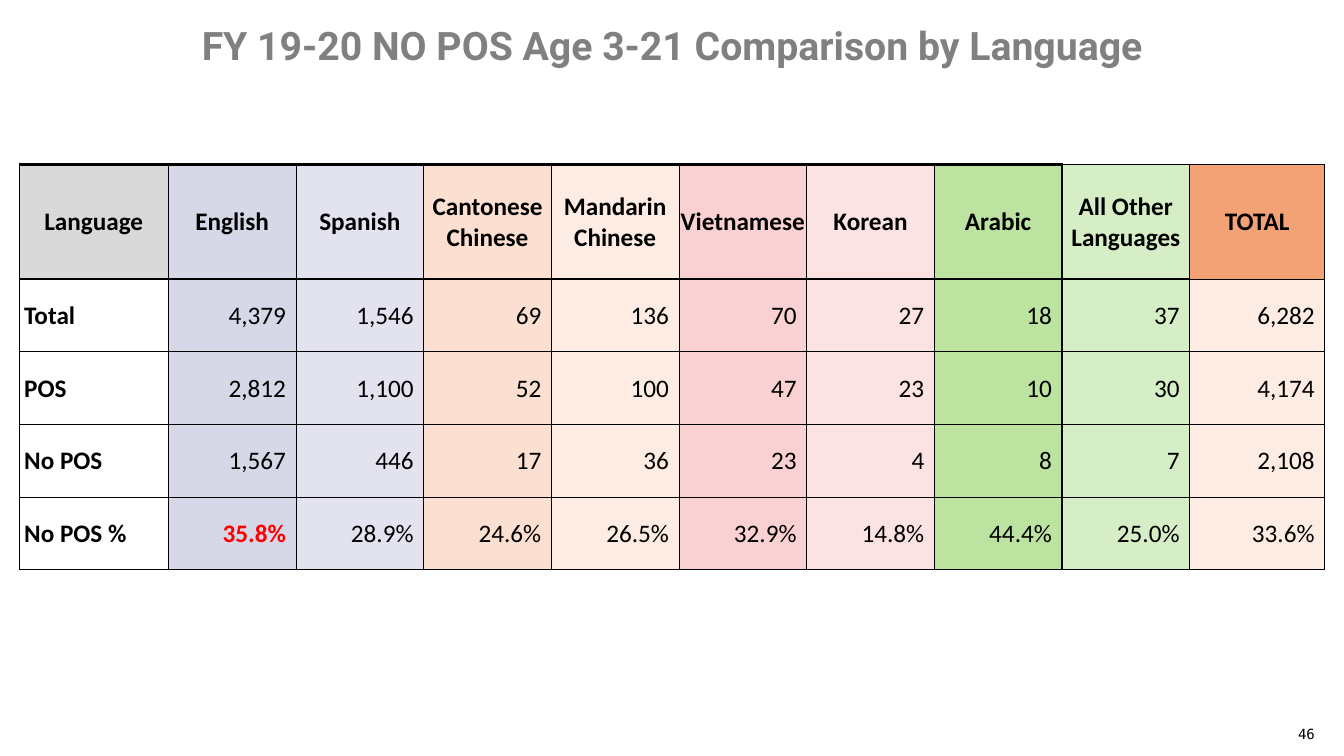
import pptx
import pptx.dml.color
import pptx.enum.text
import pptx.oxml.ns
import pptx.util
import lxml.etree

Inches = pptx.util.Inches
Pt = pptx.util.Pt
ALIGN = pptx.enum.text.PP_ALIGN
ANCHOR = pptx.enum.text.MSO_ANCHOR

TITLE = "FY 19-20 NO POS Age 3-21 Comparison by Language"
PAGE_NUMBER = "46"
LANGUAGES = [
    ("Language", "D9D9D9", 100),
    ("English", "D7D8E7", 100),
    ("Spanish", "D7D8E7", 70),
    ("Cantonese\nChinese", "FBE0D1", 100),
    ("Mandarin\nChinese", "FBE0D1", 60),
    ("Vietnamese", "F9D1D3", 100),
    ("Korean", "F9D1D3", 60),
    ("Arabic", "BCE4A0", 100),
    ("All Other\nLanguages", "BCE4A0", 60),
    ("TOTAL", "F3A276", 100),
]
MEASURES = [
    ["Total", "4,379", "1,546", "69", "136", "70", "27", "18", "37", "6,282"],
    ["POS", "2,812", "1,100", "52", "100", "47", "23", "10", "30", "4,174"],
    ["No POS", "1,567", "446", "17", "36", "23", "4", "8", "7", "2,108"],
    ["No POS %", "35.8%", "28.9%", "24.6%", "26.5%", "32.9%", "14.8%",
     "44.4%", "25.0%", "33.6%"],
]
BODY_FILLS = {0: ("FFFFFF", 100), 9: ("FBE0D1", 60)}
HIGHLIGHT = "35.8%"
MEDIUM_EDGES = {0, 3, 7, 8, 9, 10}
LEFT, TOP, WIDTH, HEIGHT = 0.19, 1.63, 12.95, 4.02
LABEL_WIDTH, TOTAL_WIDTH, HEADER_HEIGHT = 1.48, 1.34, 1.14


def color(hex_code):
    return pptx.dml.color.RGBColor.from_string(hex_code)


def write(frame, text, align, size, font, hex_code, bold=False):
    for index, line in enumerate(text.split("\n")):
        paragraph = frame.paragraphs[0] if index == 0 else frame.add_paragraph()
        paragraph.alignment = align
        run = paragraph.add_run()
        run.text = line
        run.font.size = Pt(size)
        run.font.name = font
        run.font.bold = bold
        run.font.color.rgb = color(hex_code)


def add_label(slide, box, anchor, *style):
    frame = slide.shapes.add_textbox(*map(Inches, box)).text_frame
    frame.word_wrap = True
    frame.vertical_anchor = anchor
    write(frame, *style)


def child(parent, tag, **attributes):
    return lxml.etree.SubElement(parent, pptx.oxml.ns.qn(tag), attributes)


def fill_cell(cell, hex_code, opacity):
    cell.fill.solid()
    cell.fill.fore_color.rgb = color(hex_code)
    if opacity < 100:
        shade = cell._tc.tcPr.find(".//" + pptx.oxml.ns.qn("a:srgbClr"))
        child(shade, "a:alpha", val=str(opacity * 1000))


def border_cell(cell, widths):
    properties = cell._tc.tcPr
    for index, (side, width) in enumerate(zip("LRTB", widths)):
        line = child(properties, "a:ln" + side, w=str(Pt(width)))
        child(child(line, "a:solidFill"), "a:srgbClr", val="000000")
        properties.insert(index, line)


def vertical_edge(edge):
    return 1 if edge in MEDIUM_EDGES else 0.5


def horizontal_edge(edge, column):
    last_heavy_column = {0: 7, 1: 8}.get(edge, -1)
    return 2 if column <= last_heavy_column else 0.5


def build_table(slide):
    rows = [[name for name, _, _ in LANGUAGES]] + MEASURES
    table = slide.shapes.add_table(
        len(rows), len(LANGUAGES), *map(Inches, (LEFT, TOP, WIDTH, HEIGHT))).table
    table.first_row = table.horz_banding = False
    language_width = (WIDTH - LABEL_WIDTH - TOTAL_WIDTH) / (len(LANGUAGES) - 2)
    for index, column in enumerate(table.columns):
        column.width = Inches({0: LABEL_WIDTH, 9: TOTAL_WIDTH}.get(index, language_width))
    for index, row in enumerate(table.rows):
        row.height = Inches((HEIGHT - HEADER_HEIGHT) / len(MEASURES) if index else HEADER_HEIGHT)

    for r, texts in enumerate(rows):
        for c, text in enumerate(texts):
            cell = table.cell(r, c)
            header, label = r == 0, c == 0
            cell.vertical_anchor = ANCHOR.MIDDLE
            cell.margin_left = Inches(0.05 if label and not header else 0.01)
            cell.margin_right = Inches(0.01 if label or header else 0.1)
            cell.margin_top, cell.margin_bottom = Inches(0.01), 0
            align = ALIGN.CENTER if header else ALIGN.LEFT if label else ALIGN.RIGHT
            marked = text == HIGHLIGHT
            write(cell.text_frame, text, align, 18, "Calibri",
                  "FF0000" if marked else "000000", header or label or marked)
            shade = LANGUAGES[c][1:]
            fill_cell(cell, *(shade if header else BODY_FILLS.get(c, shade)))
            border_cell(cell, (vertical_edge(c), vertical_edge(c + 1),
                               horizontal_edge(r, c), horizontal_edge(r + 1, c)))


def main():
    deck = pptx.Presentation()
    deck.slide_width, deck.slide_height = Inches(13.33), Inches(7.5)
    slide = deck.slides.add_slide(deck.slide_layouts[6])
    add_label(slide, (0, 0, 13.33, 0.9), ANCHOR.MIDDLE,
              TITLE, ALIGN.CENTER, 28, "Roboto", "808080", True)
    add_label(slide, (12.61, 7.01, 0.53, 0.4), ANCHOR.BOTTOM,
              PAGE_NUMBER, ALIGN.RIGHT, 10, "DejaVu Sans Mono", "000000")
    build_table(slide)
    deck.save("out.pptx")


if __name__ == "__main__":
    main()
